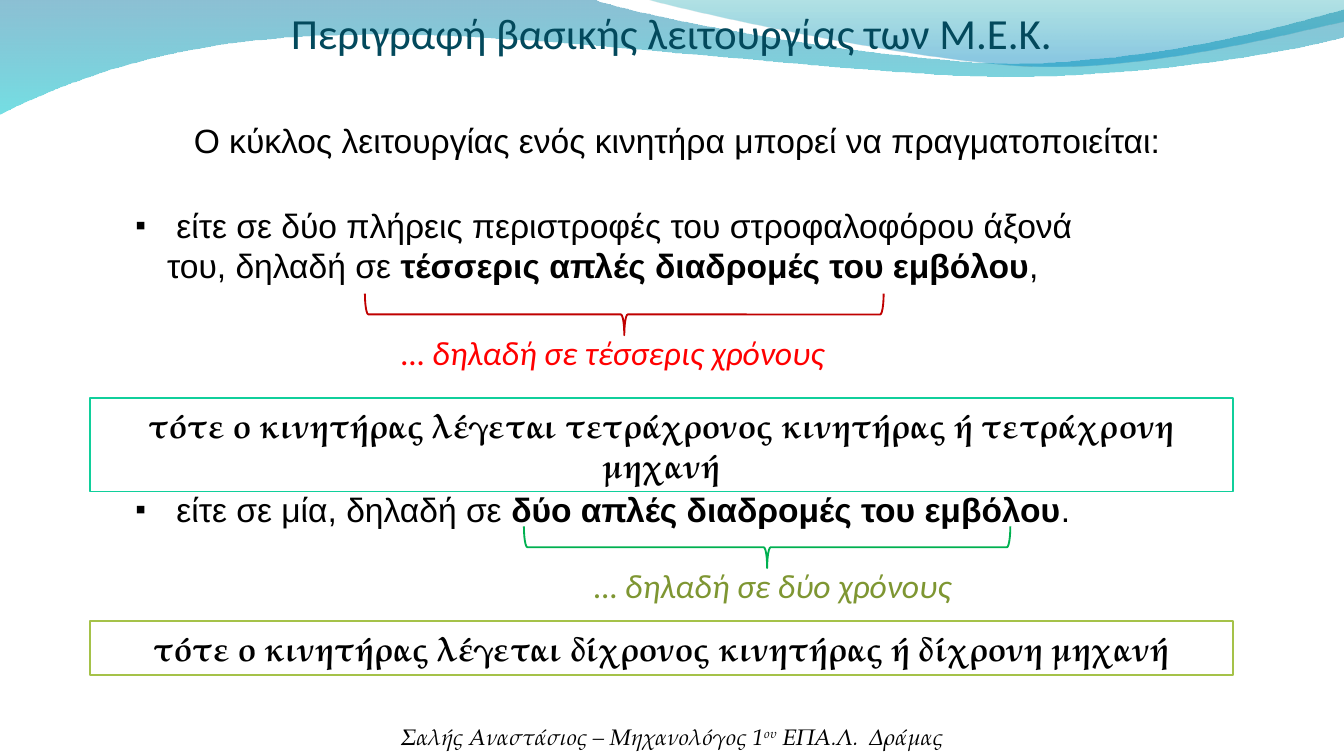
from dataclasses import dataclass

from lxml import etree
from pptx import Presentation
from pptx.dml.color import RGBColor
from pptx.enum import shapes, text
from pptx.oxml import ns
from pptx.util import Pt

BLACK = RGBColor(0x00, 0x00, 0x00)
WHITE = RGBColor(0xFF, 0xFF, 0xFF)
TITLE_TEAL = RGBColor(0x03, 0x49, 0x5C)
DARK_RED = RGBColor(0xC0, 0x00, 0x00)
RED = RGBColor(0xFF, 0x00, 0x00)
GREEN = RGBColor(0x00, 0xB0, 0x50)
OLIVE = RGBColor(0x7E, 0x96, 0x32)
MINT = RGBColor(0x10, 0xCF, 0x9B)
LIME = RGBColor(0xA5, 0xC2, 0x49)
WAVE_BLUE = RGBColor(0x00, 0x74, 0xA0)
WAVE_CYAN = RGBColor(0x00, 0xC4, 0xCD)
CREST_BLUE = RGBColor(0x00, 0x8A, 0xBF)
CREST_TEAL = RGBColor(0x00, 0xA0, 0xA8)

SERIF = "TeX Gyre Pagella"
LIST_INDENT = 17

Point = tuple[float, float]


@dataclass
class Box:
    left: float
    top: float
    width: float
    height: float

    def lengths(self) -> tuple:
        return Pt(self.left), Pt(self.top), Pt(self.width), Pt(self.height)


@dataclass
class Style:
    font: str
    size: float
    color: RGBColor = BLACK
    bold: bool = False
    italic: bool = False


@dataclass
class Stop:
    position: float
    color: RGBColor
    alpha: int


@dataclass
class Wave:
    start: Point
    segments: list[list[Point]]
    stops: tuple[Stop, Stop]
    angle: float


@dataclass
class Brace:
    box: Box
    color: RGBColor


@dataclass
class Label:
    box: Box
    wording: str
    style: Style
    centered: bool = False
    wrap: bool = True


@dataclass
class Conclusion:
    box: Box
    wording: str
    border: RGBColor


@dataclass
class ListItem:
    box: Box
    lead: str
    emphasis: str
    ending: str


BODY = Style("Arial", 18)
CREDIT = Style(SERIF, 12, italic=True)

WAVES = [
    Wave((0, 0), [
        [(316.8, -0.7)],
        [(342.7, 9.4), (478.1, 33.8), (545.8, 33.8)],
        [(614.2, 33.8), (689.8, 13.7), (720, 5)],
        [(720.7, 19.4)],
        [(707.8, 23.8), (626.4, 41), (537.1, 41)],
        [(447.8, 40.3), (275, 15.1), (185, 18.7)],
        [(92.9, 19.4), (33.1, 44.6), (-0.7, 61.2)],
    ], (Stop(0, WAVE_BLUE, 45), Stop(1, WAVE_CYAN, 55)), 270),
    Wave((344.9, -0.7), [
        [(366.5, 5.8), (491, 33.1), (553.7, 35.3)],
        [(616.3, 37.4), (691.9, 17.3), (720, 11.5)],
        [(720, 0)],
    ], (Stop(0.2, CREST_BLUE, 45), Stop(1, CREST_TEAL, 30)), 90),
]

FOOTER = Label(Box(36.7, 383.8, 646.6, 21.2), "Σαλής Αναστάσιος – Μηχανολόγος 1", CREDIT, centered=True)
INTRODUCTION = Label(Box(87.8, 60.5, 550, 29),
                     "Ο κύκλος λειτουργίας ενός κινητήρα μπορεί να πραγματοποιείται:",
                     BODY, centered=True)

GROUPS = [
    (Brace(Box(323.3, 29.5, 22.3, 277.9), DARK_RED),
     Label(Box(208, 174.2, 242, 29), "… δηλαδή σε τέσσερις χρόνους",
           Style("Calibri", 18, RED, italic=True), wrap=False),
     Conclusion(Box(48.2, 213.1, 612.4, 50.2),
                "τότε ο κινητήρας λέγεται τετράχρονος κινητήρας ή τετράχρονη μηχανή", MINT)),
    (Brace(Box(399.8, 162.9, 22.3, 260.6), GREEN),
     Label(Box(311.3, 299.1, 206.6, 29), "… δηλαδή σε δύο χρόνους",
           Style("Calibri", 18, OLIVE, italic=True), wrap=False),
     Conclusion(Box(48.2, 332.6, 612.4, 29),
                "τότε ο κινητήρας λέγεται δίχρονος κινητήρας ή δίχρονη μηχανή", LIME)),
]

LIST_ITEMS = [
    ListItem(Box(65.3, 106, 550, 50.4),
             " είτε σε δύο πλήρεις περιστροφές του στροφαλοφόρου άξονά του, δηλαδή σε ",
             "τέσσερις απλές διαδρομές του εμβόλου", ","),
    ListItem(Box(65.3, 258.5, 550, 29), " είτε σε μία, δηλαδή σε ",
             "δύο απλές διαδρομές του εμβόλου", "."),
]


def place(shape, box: Box) -> None:
    shape.left, shape.top, shape.width, shape.height = box.lengths()


def format_run(run, style: Style) -> None:
    font = run.font
    font.name, font.size = style.font, Pt(style.size)
    font.bold, font.italic = style.bold, style.italic
    font.color.rgb = style.color


def write(shape, wording: str, style: Style, centered: bool = False, wrap: bool = True):
    frame = shape.text_frame
    frame.text = wording
    frame.word_wrap = wrap
    frame.auto_size = text.MSO_AUTO_SIZE.NONE
    frame.vertical_anchor = text.MSO_ANCHOR.TOP
    paragraph = frame.paragraphs[0]
    paragraph.alignment = text.PP_ALIGN.CENTER if centered else text.PP_ALIGN.LEFT
    paragraph.space_before = Pt(0)
    format_run(paragraph.runs[0], style)
    return paragraph


def append_run(paragraph, wording: str, style: Style):
    run = paragraph.add_run()
    run.text = wording
    format_run(run, style)
    return run


def bend_segments(shape, segments: list[list[Point]]) -> None:
    lines = iter(list(shape.element.spPr.iter(ns.qn("a:lnTo"))))
    for segment in segments:
        parts = [next(lines) for _ in segment]
        if len(parts) == 3:
            curve = etree.Element(ns.qn("a:cubicBezTo"))
            parts[0].addprevious(curve)
            for part in parts:
                curve.append(part[0])
                part.getparent().remove(part)


def draw_wave(slide, wave: Wave):
    builder = slide.shapes.build_freeform(Pt(wave.start[0]), Pt(wave.start[1]))
    points = [(Pt(x), Pt(y)) for segment in wave.segments for x, y in segment]
    builder.add_line_segments(points, close=True)
    shape = builder.convert_to_shape()
    bend_segments(shape, wave.segments)
    shape.shadow.inherit = False
    shape.line.fill.background()
    shape.fill.gradient()
    shape.fill.gradient_angle = wave.angle
    for gradient_stop, stop in zip(shape.fill.gradient_stops, wave.stops):
        gradient_stop.position = stop.position
        gradient_stop.color.rgb = stop.color
    for color, stop in zip(shape.element.spPr.iter(ns.qn("a:srgbClr")), wave.stops):
        etree.SubElement(color, ns.qn("a:alpha"), val=str(stop.alpha * 1000))
    return shape


def draw_brace(slide, brace: Brace) -> None:
    shape = slide.shapes.add_shape(shapes.MSO_SHAPE.RIGHT_BRACE, *brace.box.lengths())
    shape.rotation = 90
    shape.shadow.inherit = False
    shape.fill.background()
    shape.line.color.rgb, shape.line.width = brace.color, Pt(1)


def draw_label(slide, label: Label):
    shape = slide.shapes.add_textbox(*label.box.lengths())
    return write(shape, label.wording, label.style, label.centered, label.wrap)


def draw_conclusion(slide, conclusion: Conclusion) -> None:
    shape = slide.shapes.add_shape(shapes.MSO_SHAPE.RECTANGLE, *conclusion.box.lengths())
    shape.shadow.inherit = False
    shape.fill.solid()
    shape.fill.fore_color.rgb = WHITE
    shape.line.color.rgb, shape.line.width = conclusion.border, Pt(1)
    write(shape, conclusion.wording, Style(SERIF, 18, bold=True), centered=True)


def fill_list_item(placeholder, item: ListItem) -> None:
    place(placeholder, item.box)
    paragraph = write(placeholder, item.lead, BODY)
    append_run(paragraph, item.emphasis, Style("Arial", 18, bold=True))
    append_run(paragraph, item.ending, BODY)
    properties = paragraph._p.get_or_add_pPr()
    properties.set("marL", str(Pt(LIST_INDENT)))
    properties.set("indent", str(-Pt(LIST_INDENT)))
    bullet_color = etree.SubElement(properties, ns.qn("a:buClr"))
    etree.SubElement(bullet_color, ns.qn("a:srgbClr"), val=str(BLACK))
    etree.SubElement(properties, ns.qn("a:buSzPct"), val="90000")
    etree.SubElement(properties, ns.qn("a:buFont"), typeface="Arial")
    etree.SubElement(properties, ns.qn("a:buChar"), char="▪")


def main() -> None:
    presentation = Presentation()
    presentation.slide_width, presentation.slide_height = Pt(720), Pt(405)
    slide = presentation.slides.add_slide(presentation.slide_layouts[3])
    title, first_list, second_list = slide.placeholders
    for wave in WAVES:
        title.element.addprevious(draw_wave(slide, wave).element)
    footer = draw_label(slide, FOOTER)
    append_run(footer, "ου", CREDIT)._r.get_or_add_rPr().set("baseline", "30000")
    append_run(footer, " ΕΠΑ.Λ.  Δράμας", CREDIT)
    title.element.addprevious(slide.shapes[-1].element)
    place(title, Box(14.2, 0, 691.9, 34.6))
    write(title, "Περιγραφή βασικής λειτουργίας των Μ.Ε.Κ.", Style("Calibri", 23, TITLE_TEAL), centered=True)
    draw_label(slide, INTRODUCTION)
    first_list.element.addprevious(slide.shapes[-1].element)
    for brace, label, conclusion in GROUPS:
        draw_brace(slide, brace)
        draw_label(slide, label)
        draw_conclusion(slide, conclusion)
    slide.shapes[-1].element.addnext(second_list.element)
    for placeholder, item in zip((first_list, second_list), LIST_ITEMS):
        fill_list_item(placeholder, item)
    presentation.save("out.pptx")


if __name__ == "__main__":
    main()
